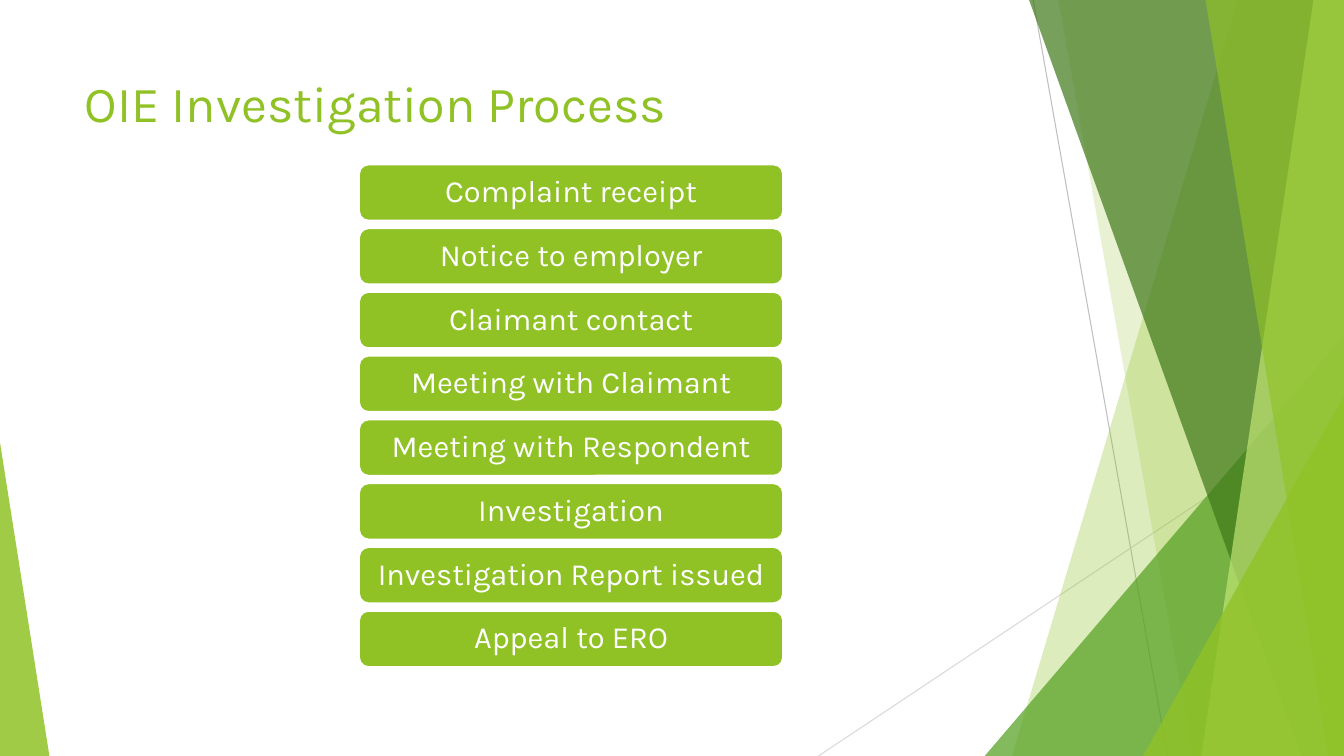
import dataclasses
import typing

import pptx
import pptx.dml.color
import pptx.dml.fill
import pptx.enum.shapes
import pptx.enum.text
import pptx.oxml
import pptx.oxml.ns
import pptx.shapes.autoshape
import pptx.slide
import pptx.text.text
import pptx.util

Pt = pptx.util.Pt
RGBColor = pptx.dml.color.RGBColor
PresetShape = pptx.enum.shapes.MSO_SHAPE
Align = pptx.enum.text.PP_ALIGN
Anchor = pptx.enum.text.MSO_ANCHOR

SLIDE_WIDTH = 960
SLIDE_HEIGHT = 540
TITLE_ONLY_LAYOUT = 5


@dataclasses.dataclass(frozen=True)
class Theme:
    font: str = "Karla"
    title_size: float = 36
    step_size: float = 22
    white: str = "FFFFFF"
    lime: str = "90C226"
    pale_lime: str = "C0E474"
    green: str = "54A021"
    dark_green: str = "3F7819"
    grey: str = "BFBFBF"
    light_grey: str = "D9D9D9"


THEME = Theme()


@dataclasses.dataclass(frozen=True)
class Ray:
    """A thin straight line behind the facets."""
    start: tuple[float, float]
    end: tuple[float, float]
    color: str


@dataclasses.dataclass(frozen=True)
class Band:
    """A full-height facet with a slanted left edge, reaching the right side."""
    top_x: float
    bottom_x: float
    color: str
    opacity: int


@dataclasses.dataclass(frozen=True)
class Corner:
    """A right triangle standing on the bottom edge."""
    left: float
    top: float
    width: float
    apex: float
    color: str
    opacity: int


RAYS = [
    Ray((738, 0), (834, 540), THEME.grey),
    Ray((960, 290), (584.6, 540), THEME.light_grey),
]

FACETS: list[Band | Corner] = [
    Band(884.2, 722.9, THEME.lime, 30),
    Band(756, 851.8, THEME.lime, 20),
    Corner(703.4, 239.8, 256.6, 1, THEME.green, 72),
    Band(735.1, 929.5, THEME.dark_green, 70),
    Band(938.2, 858.2, THEME.pale_lime, 70),
    Band(861.1, 949, THEME.lime, 65),
    Corner(816.5, 283, 143.5, 1, THEME.lime, 80),
    Corner(0, 316.1, 35.3, 0, THEME.lime, 85),
]

STEPS = [
    "Complaint receipt",
    "Notice to employer",
    "Claimant contact",
    "Meeting with Claimant",
    "Meeting with Respondent",
    "Investigation",
    "Investigation Report issued",
    "Appeal to ERO",
]
STEP_LEFT, STEP_TOP = 256.4, 117.4
STEP_WIDTH, STEP_HEIGHT = 303, 40.3
STEP_PITCH = 45.55


def set_fill(fill: pptx.dml.fill.FillFormat, color: str, opacity: int = 100) -> None:
    fill.solid()
    fill.fore_color.rgb = RGBColor.from_string(color)
    if opacity < 100:
        for color_element in fill._xPr.iter(pptx.oxml.ns.qn("a:srgbClr")):
            alpha = pptx.oxml.parse_xml(
                f'<a:alpha {pptx.oxml.ns.nsdecls("a")} val="{opacity * 1000}"/>')
            color_element.append(alpha)


def write_text(frame: pptx.text.text.TextFrame, text: str, *, size: float, color: str,
               align: Align, anchor: Anchor, inset: tuple[float, float],
               line_spacing: float = 1.0) -> None:
    frame.word_wrap = True
    frame.auto_size = pptx.enum.text.MSO_AUTO_SIZE.NONE
    frame.vertical_anchor = anchor
    frame.margin_left = frame.margin_right = Pt(inset[0])
    frame.margin_top = frame.margin_bottom = Pt(inset[1])
    paragraph = frame.paragraphs[0]
    paragraph.alignment = align
    paragraph.line_spacing = line_spacing
    run = paragraph.add_run()
    run.text = text
    run.font.name = THEME.font
    run.font.size = Pt(size)
    run.font.color.rgb = RGBColor.from_string(color)


def draw_ray(slide: pptx.slide.Slide, ray: Ray) -> None:
    connector = slide.shapes.add_connector(
        pptx.enum.shapes.MSO_CONNECTOR.STRAIGHT,
        *(Pt(value) for value in ray.start + ray.end))
    connector.line.width = Pt(0.75)
    connector.line.color.rgb = RGBColor.from_string(ray.color)
    connector._element.spPr.append(
        pptx.oxml.parse_xml(f'<a:effectLst {pptx.oxml.ns.nsdecls("a")}/>'))


def build_band(slide: pptx.slide.Slide, band: Band) -> pptx.shapes.autoshape.Shape:
    builder = slide.shapes.build_freeform(Pt(band.top_x), 0)
    builder.add_line_segments([
        (Pt(SLIDE_WIDTH), 0),
        (Pt(SLIDE_WIDTH), Pt(SLIDE_HEIGHT)),
        (Pt(band.bottom_x), Pt(SLIDE_HEIGHT)),
    ], close=True)
    return builder.convert_to_shape()


def build_corner(slide: pptx.slide.Slide, corner: Corner) -> pptx.shapes.autoshape.Shape:
    shape = slide.shapes.add_shape(
        PresetShape.ISOSCELES_TRIANGLE, Pt(corner.left), Pt(corner.top),
        Pt(corner.width), Pt(SLIDE_HEIGHT - corner.top))
    shape.adjustments[0] = corner.apex
    return shape


def draw_facet(slide: pptx.slide.Slide, facet: Band | Corner) -> None:
    if isinstance(facet, Band):
        shape = build_band(slide, facet)
    else:
        shape = build_corner(slide, facet)
    shape.shadow.inherit = False
    shape.line.fill.background()
    set_fill(shape.fill, facet.color, facet.opacity)


def draw_title(slide: pptx.slide.Slide, text: str) -> None:
    title = slide.shapes.title
    title.left, title.top = Pt(53.3), Pt(48)
    title.width, title.height = Pt(676.8), Pt(104)
    write_text(title.text_frame, text, size=THEME.title_size, color=THEME.lime,
               align=Align.LEFT, anchor=Anchor.TOP, inset=(7.2, 3.6))


def draw_steps(slide: pptx.slide.Slide, steps: typing.Sequence[str]) -> None:
    for index, text in enumerate(steps):
        shape = slide.shapes.add_shape(
            PresetShape.ROUNDED_RECTANGLE, Pt(STEP_LEFT),
            Pt(STEP_TOP + index * STEP_PITCH), Pt(STEP_WIDTH), Pt(STEP_HEIGHT))
        shape.shadow.inherit = False
        set_fill(shape.fill, THEME.lime)
        shape.line.width = Pt(1.5)
        shape.line.color.rgb = RGBColor.from_string(THEME.white)
        write_text(shape.text_frame, text, size=THEME.step_size, color=THEME.white,
                   align=Align.CENTER, anchor=Anchor.MIDDLE, inset=(6.5, 6.5),
                   line_spacing=0.9)


def main() -> None:
    presentation = pptx.Presentation()
    presentation.slide_width = Pt(SLIDE_WIDTH)
    presentation.slide_height = Pt(SLIDE_HEIGHT)
    slide = presentation.slides.add_slide(presentation.slide_layouts[TITLE_ONLY_LAYOUT])
    for ray in RAYS:
        draw_ray(slide, ray)
    for facet in FACETS:
        draw_facet(slide, facet)
    draw_title(slide, "OIE Investigation Process")
    draw_steps(slide, STEPS)
    presentation.save("out.pptx")


if __name__ == "__main__":
    main()
